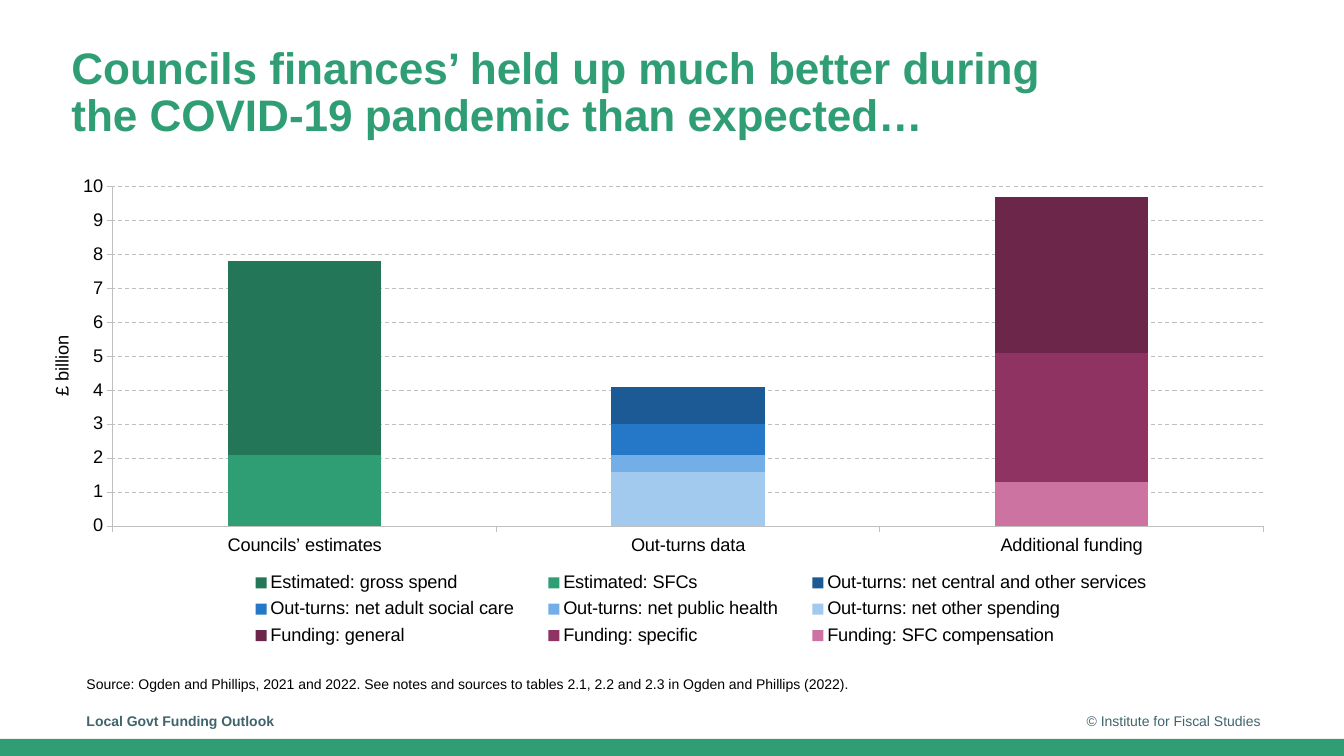
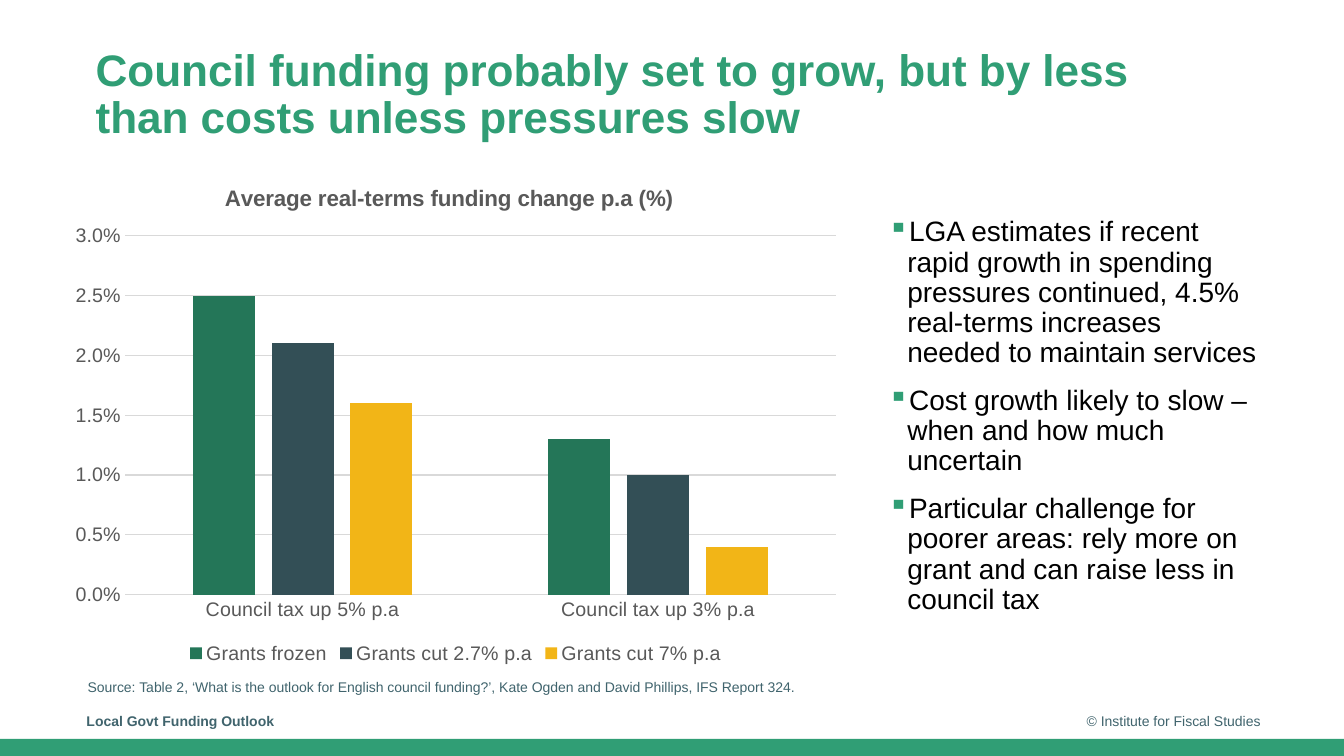
import pptx
import pptx.util
import pptx.dml.color
import pptx.oxml
import pptx.chart.data
import pptx.enum.chart
import pptx.enum.dml
import pptx.enum.shapes
import pptx.enum.text
from pptx.oxml.ns import qn

Inches, Pt = pptx.util.Inches, pptx.util.Pt
Align = pptx.enum.text.PP_ALIGN
Anchor = pptx.enum.text.MSO_ANCHOR
Chart = pptx.enum.chart

FONT = "Arial"
WIDTH, HEIGHT, BAND = 13.33, 7.5, 0.17
COLOURS = {
    "green": "309E75", "dark green": "247658", "slate": "40646D",
    "deep slate": "334F56", "amber": "F2B517", "black": "000000",
    "grey": "595959", "axis": "BFBFBF", "pale grid": "D9D9D9",
    "pink": "CD73A2", "plum": "8F3363", "dark plum": "6B264A",
    "ice": "A2C9EE", "sky": "73AEE6", "blue": "2478C7", "navy": "1B5A95",
}

# Content: all boxes are (left, top, width, height) in inches on the slide
FOOTERS = [
    ("Local Govt Funding Outlook", (0.76, 6.95, 8.84, 0.4), True, Align.LEFT),
    ("© Institute for Fiscal Studies", (9.6, 6.95, 3, 0.4), False, Align.RIGHT),
]
PANDEMIC = {
    "title": "Councils finances’ held up much better during the COVID-19 pandemic than expected…",
    "title box": (0.61, 0.41, 10.16, 0.63),
    "source": "Source: Ogden and Phillips, 2021 and 2022. See notes and sources to "
              "tables 2.1, 2.2 and 2.3 in Ogden and Phillips (2022).",
    "source box": (0.76, 6.65, 10.17, 0.27),
    "chart": {
        "kind": Chart.XL_CHART_TYPE.COLUMN_STACKED,
        "frame": (0.47, 1.74, 12.22, 4.78), "plot": (1.12, 1.85, 11.41, 3.37),
        "legend": Chart.XL_LEGEND_POSITION.RIGHT, "legend box": (2.25, 5.62, 9.4, 0.85),
        "size": 13, "ink": "black", "line": "axis", "dashed": True,
        "tick": Chart.XL_TICK_MARK.OUTSIDE, "value line": True,
        "top": 10, "step": 1, "format": "#,##0", "gap": 150, "overlap": 100,
        "axis title": "£ billion",
        "categories": ["Councils’ estimates", "Out-turns data", "Additional funding"],
        "series": [
            ("Funding: SFC compensation", "pink", (None, None, 1.3)),
            ("Funding: specific", "plum", (None, None, 3.8)),
            ("Funding: general", "dark plum", (None, None, 4.6)),
            ("Out-turns: net other spending", "ice", (None, 1.6, None)),
            ("Out-turns: net public health", "sky", (None, 0.5, None)),
            ("Out-turns: net adult social care", "blue", (None, 0.9, None)),
            ("Out-turns: net central and other services", "navy", (None, 1.1, None)),
            ("Estimated: SFCs", "green", (2.1, None, None)),
            ("Estimated: gross spend", "dark green", (5.7, None, None)),
        ],
    },
}
OUTLOOK = {
    "title": "Council funding probably set to grow, but by less than costs unless pressures slow",
    "title box": (0.85, 0.43, 10.59, 0.63),
    "source": "Source: Table 2, ‘What is the outlook for English council funding?’, "
              "Kate Ogden and David Phillips, IFS Report 324.",
    "source box": (0.77, 6.49, 7.67, 0.65),
    "chart": {
        "kind": Chart.XL_CHART_TYPE.COLUMN_CLUSTERED,
        "frame": (0.6, 1.57, 7.84, 5.06), "plot": (1.24, 2.34, 7.05, 3.56),
        "legend": Chart.XL_LEGEND_POSITION.BOTTOM,
        "size": 14, "ink": "grey", "line": "pale grid", "dashed": False,
        "tick": Chart.XL_TICK_MARK.NONE, "value line": False,
        "top": 0.03, "step": 0.005, "format": "0.0%", "gap": 219, "overlap": -27,
        "title": "Average real-terms funding change p.a (%)", "title at": (2.19, 1.78),
        "categories": ["Council tax up 5% p.a", "Council tax up 3% p.a"],
        "series": [
            ("Grants frozen", "dark green", (0.025, 0.013)),
            ("Grants cut 2.7% p.a", "deep slate", (0.021, 0.01)),
            ("Grants cut 7% p.a", "amber", (0.016, 0.004)),
        ],
    },
    "bullets": [
        "LGA estimates if recent rapid growth in spending pressures continued, "
        "4.5% real-terms increases needed to maintain services",
        "Cost growth likely to slow – when and how much uncertain",
        "Particular challenge for poorer areas: rely more on grant and can raise less in council tax",
    ],
    "bullet box": (8.71, 2.11, 3.88, 4.33),
}


def colour(name):
    return pptx.dml.color.RGBColor.from_string(COLOURS[name])


def style(font, size, ink, bold=False):
    font.name, font.size, font.bold = FONT, Pt(size), bold
    font.color.rgb = colour(ink)


def inches(box):
    return [Inches(length) for length in box]


def add_text(page, box, lines, size, ink, bold=False, align=Align.LEFT,
             anchor=Anchor.TOP, spacing=None, gap=(0, 0), bullet=False):
    frame = page.shapes.add_textbox(*inches(box)).text_frame
    frame.word_wrap, frame.vertical_anchor = True, anchor
    for index, line in enumerate(lines):
        para = frame.paragraphs[0] if index == 0 else frame.add_paragraph()
        para.alignment, para.line_spacing = align, spacing
        para.space_before = Pt(gap[0] if index else 0)
        para.space_after = Pt(gap[1])
        if bullet:
            add_bullet(para)
        span = para.add_run()
        span.text = line
        style(span.font, size, ink, bold)


def add_bullet(para):
    properties = para._p.get_or_add_pPr()
    indent = Inches(0.19)
    properties.set("marL", str(indent))
    properties.set("indent", str(-indent))
    tint = pptx.oxml.parse_xml(
        f'<a:buClr xmlns:a="http://schemas.openxmlformats.org/drawingml/2006/main">'
        f'<a:srgbClr val="{COLOURS["green"]}"/></a:buClr>')
    properties.append(tint)
    mark = properties.makeelement(qn("a:buChar"), {"char": "▪"})
    properties.append(mark)


def place(parent, index, frame, box, inner=False):
    """Fix a chart part at a slide position, written as shares of the chart frame."""
    for old in parent.findall(qn("c:layout")):
        parent.remove(old)
    layout = parent.makeelement(qn("c:layout"), {})
    manual = layout.makeelement(qn("c:manualLayout"), {})
    layout.append(manual)
    settings = [("layoutTarget", "inner")] if inner else []
    settings += [("xMode", "edge"), ("yMode", "edge")]
    shares = ((box[0] - frame[0]) / frame[2], (box[1] - frame[1]) / frame[3],
              *(length / whole for length, whole in zip(box[2:], frame[2:])))
    settings += [(key, f"{share:.4f}") for key, share in zip("xywh", shares)]
    for key, value in settings:
        manual.append(manual.makeelement(qn("c:" + key), {"val": value}))
    parent.insert(index, layout)


def style_line(line, name, dashed=False):
    line.color.rgb = colour(name)
    line.width = Pt(0.75)
    if dashed:
        line.dash_style = pptx.enum.dml.MSO_LINE.DASH


def write_title(title, text, size, ink, bold):
    span = title.text_frame.paragraphs[0].add_run()
    span.text = text
    style(span.font, size, ink, bold)


def add_columns(page, spec_sheet):
    sheet, frame = spec_sheet, spec_sheet["frame"]
    data = pptx.chart.data.CategoryChartData(number_format="General")
    data.categories = sheet["categories"]
    for name, _, values in sheet["series"]:
        data.add_series(name, values)
    chart = page.shapes.add_chart(sheet["kind"], *inches(frame), data).chart
    style(chart.font, sheet["size"], sheet["ink"])

    # Columns
    plot = chart.plots[0]
    plot.gap_width, plot.overlap, plot.vary_by_categories = sheet["gap"], sheet["overlap"], False
    for series, (_, fill, _) in zip(plot.series, sheet["series"]):
        series.format.fill.solid()
        series.format.fill.fore_color.rgb = colour(fill)
        series.invert_if_negative = False
    place(chart._chartSpace.chart.plotArea, 0, frame, sheet["plot"], inner=True)

    # Axes
    values = chart.value_axis
    for axis in (chart.category_axis, values):
        axis.major_tick_mark = sheet["tick"]
        axis.minor_tick_mark = Chart.XL_TICK_MARK.NONE
        style(axis.tick_labels.font, sheet["size"], sheet["ink"])
        style_line(axis.format.line, sheet["line"])
    if not sheet["value line"]:
        values.format.line.fill.background()
    values.minimum_scale, values.maximum_scale = 0, sheet["top"]
    values.major_unit = sheet["step"]
    values.tick_labels.number_format = sheet["format"]
    values.tick_labels.number_format_is_linked = False
    values.has_major_gridlines = True
    style_line(values.major_gridlines.format.line, sheet["line"], sheet["dashed"])
    if "axis title" in sheet:
        write_title(values.axis_title, sheet["axis title"], sheet["size"], sheet["ink"], False)

    # Title and legend
    chart.has_title = "title" in sheet
    if chart.has_title:
        write_title(chart.chart_title, sheet["title"], 16, sheet["ink"], True)
        place(chart.chart_title._element, 1, frame, sheet["title at"])
    chart.has_legend = True
    chart.legend.position = sheet["legend"]
    chart.legend.include_in_layout = False
    style(chart.legend.font, sheet["size"], sheet["ink"])
    if "legend box" in sheet:
        place(chart.legend._element, 1, frame, sheet["legend box"])


def add_page(deck, content):
    page = deck.slides.add_slide(deck.slide_layouts[6])
    band = page.shapes.add_shape(pptx.enum.shapes.MSO_SHAPE.RECTANGLE,
                                 *inches((0, HEIGHT - BAND, WIDTH, BAND)))
    band.shadow.inherit = False
    band.fill.solid()
    band.fill.fore_color.rgb = colour("green")
    band.line.fill.background()
    for text, box, bold, align in FOOTERS:
        add_text(page, box, [text], 10, "slate", bold, align, Anchor.MIDDLE)
    add_text(page, content["title box"], [content["title"]], 31.5, "green", True, spacing=0.9)
    add_columns(page, content["chart"])
    return page


def main():
    deck = pptx.Presentation()
    deck.slide_width, deck.slide_height = Inches(WIDTH), Inches(HEIGHT)

    page = add_page(deck, PANDEMIC)
    add_text(page, PANDEMIC["source box"], [PANDEMIC["source"]], 10, "black", spacing=Pt(12))

    page = add_page(deck, OUTLOOK)
    add_text(page, OUTLOOK["bullet box"], OUTLOOK["bullets"], 20, "black",
             spacing=0.9, gap=(8, 4.5), bullet=True)
    add_text(page, OUTLOOK["source box"], [OUTLOOK["source"]], 10, "slate", anchor=Anchor.MIDDLE)

    deck.save("out.pptx")


if __name__ == "__main__":
    main()
